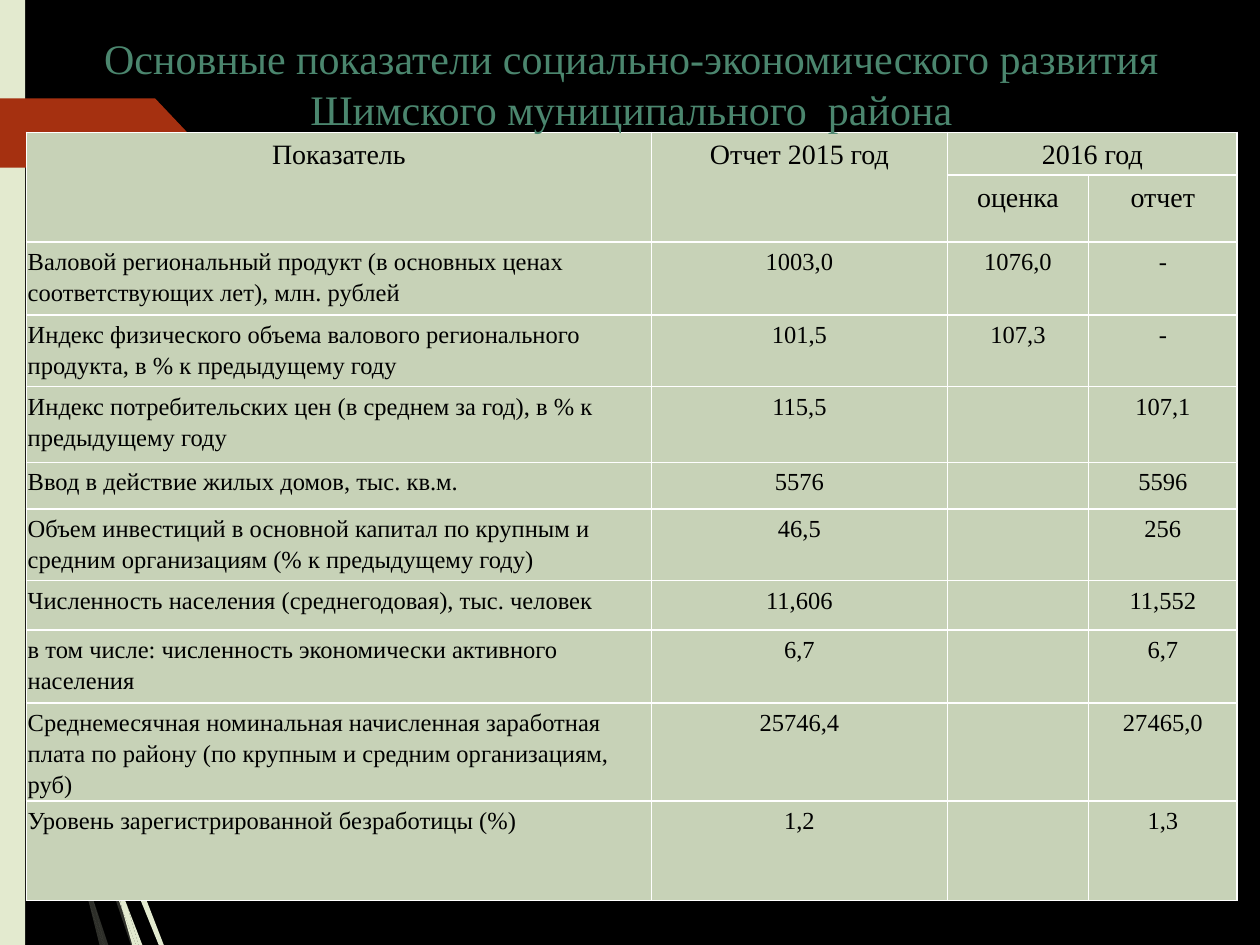
from dataclasses import dataclass

from lxml import etree
from pptx import Presentation
from pptx.dml.color import RGBColor
from pptx.enum.shapes import MSO_SHAPE
from pptx.enum.text import MSO_ANCHOR, PP_ALIGN
from pptx.oxml.ns import qn
from pptx.util import Inches, Pt

RECTANGLE = MSO_SHAPE.RECTANGLE
CENTER, LEFT = PP_ALIGN.CENTER, PP_ALIGN.LEFT
TOP = MSO_ANCHOR.TOP


@dataclass(frozen=True)
class Theme:
    background: str = "000000"
    cream: str = "E3EACF"
    arrow: str = "A53010"
    cell: str = "C7D2B7"
    border: str = "FFFFFF"
    body: str = "000000"
    title: str = "4B866E"
    font: str = "Times New Roman"
    title_size: int = 24
    header_size: int = 16
    body_size: int = 14


THEME = Theme()

TITLE_LINES = [
    "Основные показатели социально-экономического развития",
    "Шимского муниципального  района",
]
COLUMN_WIDTHS = [4.96, 2.35, 1.12, 1.18]
ROW_HEIGHTS = [0.34, 0.53, 0.58, 0.57, 0.6, 0.37, 0.57, 0.39, 0.58, 0.78, 0.79]
HEADER_ROWS = 2
TABLE_ROWS = [
    ("Показатель", "Отчет 2015 год", "2016 год", ""),
    ("", "", "оценка", "отчет"),
    ("Валовой региональный продукт (в основных ценах соответствующих лет), млн. рублей",
     "1003,0", "1076,0", "-"),
    ("Индекс физического объема валового регионального продукта, в % к предыдущему году",
     "101,5", "107,3", "-"),
    ("Индекс потребительских цен (в среднем за год), в % к предыдущему году",
     "115,5", "", "107,1"),
    ("Ввод в действие жилых домов, тыс. кв.м.", "5576", "", "5596"),
    ("Объем инвестиций в основной капитал по крупным и средним организациям "
     "(% к предыдущему году)", "46,5", "", "256"),
    ("Численность населения (среднегодовая), тыс. человек", "11,606", "", "11,552"),
    ("в том числе: численность экономически активного населения", "6,7", "", "6,7"),
    ("Среднемесячная номинальная начисленная заработная плата по району "
     "(по крупным и средним организациям, руб)", "25746,4", "", "27465,0"),
    ("Уровень зарегистрированной безработицы (%)", "1,2", "", "1,3"),
]
MERGES = [((0, 0), (1, 0)), ((0, 1), (1, 1)), ((0, 2), (0, 3))]

# Grass strands that reach below the table, as points in inches.
FAINT_STRANDS = [
    [(0.64, 6.07), (0.61, 5.96), (0.61, 6.1), (0.85, 6.94), (1.04, 7.5), (1.08, 7.5),
     (0.88, 6.92)],
    [(0.83, 7.5), (0.86, 7.5), (0.73, 7.11)],
    [(0.7, 7.14), (0.79, 7.5), (0.82, 7.5)],
    [(0.67, 6.92), (0.65, 6.83), (0.69, 7.07), (0.7, 7.14), (0.82, 7.5), (0.83, 7.5),
     (0.73, 7.11)],
]
BRIGHT_STRANDS = [
    [(0.94, 6.49), (0.91, 6.41), (0.91, 6.56), (1.09, 7.08), (1.26, 7.5), (1.3, 7.5),
     (1.13, 7.06)],
    [(0.91, 6.91), (0.81, 6.57), (0.6, 5.56), (0.53, 5.05), (0.47, 4.77), (0.56, 5.57),
     (0.77, 6.59), (0.92, 7.08), (0.97, 7.22), (0.96, 7.17)],
    [(1.1, 7.5), (1.13, 7.5), (1.01, 7.19)],
    [(0.97, 7.22), (1.05, 7.5), (1.08, 7.5)],
    [(0.96, 7.06), (0.91, 6.91), (0.96, 7.17), (0.97, 7.22), (1.08, 7.5), (1.1, 7.5),
     (1.01, 7.19)],
]


def paint(shape, color, opacity=100):
    shape.shadow.inherit = False
    shape.fill.solid()
    shape.fill.fore_color.rgb = RGBColor.from_string(color)
    shape.line.fill.background()
    if opacity < 100:
        fill_color = next(shape.fill._xPr.iter(qn("a:srgbClr")))
        etree.SubElement(fill_color, qn("a:alpha"), val=str(opacity * 1000))


def add_outline(page, points, color, opacity=100):
    corners = [(Inches(x), Inches(y)) for x, y in points]
    builder = page.shapes.build_freeform(*corners[0])
    builder.add_line_segments(corners[1:], close=True)
    paint(builder.convert_to_shape(), color, opacity)


def write_text(frame, lines, size, color, align=LEFT, spacing=None):
    """Write the lines as one paragraph with line breaks."""
    frame.word_wrap = True
    para = frame.paragraphs[0]
    para.alignment = align
    if spacing:
        para.line_spacing = spacing
    for index, line in enumerate(lines):
        if index:
            para.add_line_break()
        span = para.add_run()
        span.text = line
        span.font.name = THEME.font
        span.font.size = Pt(size)
        span.font.color.rgb = RGBColor.from_string(color)


def add_borders(cell, color, width):
    properties = cell._tc.get_or_add_tcPr()
    for index, side in enumerate(("lnL", "lnR", "lnT", "lnB")):
        line = etree.Element(qn(f"a:{side}"), w=str(Pt(width)))
        fill = etree.SubElement(line, qn("a:solidFill"))
        etree.SubElement(fill, qn("a:srgbClr"), val=color)
        properties.insert(index, line)


def add_decoration(page, left, top, width, height):
    for strand in FAINT_STRANDS:
        add_outline(page, strand, THEME.cream, opacity=20)
    for strand in BRIGHT_STRANDS:
        add_outline(page, strand, THEME.cream)
    strip = page.shapes.add_shape(
        RECTANGLE, Inches(left), Inches(top), Inches(width), Inches(height))
    paint(strip, THEME.cream)


def add_arrow(page, left, top, width, height):
    right, bottom, middle = left + width, top + height, top + height / 2
    shoulder = right - 0.26
    add_outline(page, [(left, top), (shoulder, top), (right, middle),
                       (shoulder, bottom), (left, bottom)], THEME.arrow)


def add_indicator_table(page, left, top):
    frame = page.shapes.add_table(
        len(ROW_HEIGHTS), len(COLUMN_WIDTHS), Inches(left), Inches(top),
        Inches(sum(COLUMN_WIDTHS)), Inches(sum(ROW_HEIGHTS)))
    table = frame.table
    for column, width in zip(table.columns, COLUMN_WIDTHS):
        column.width = Inches(width)
    for row, height in zip(table.rows, ROW_HEIGHTS):
        row.height = Inches(height)
    for row_index, values in enumerate(TABLE_ROWS):
        is_header = row_index < HEADER_ROWS
        for column_index, value in enumerate(values):
            cell = table.cell(row_index, column_index)
            cell.margin_left = cell.margin_right = Inches(0.01)
            cell.margin_top = cell.margin_bottom = Inches(0.02)
            cell.vertical_anchor = TOP
            cell.fill.solid()
            cell.fill.fore_color.rgb = RGBColor.from_string(THEME.cell)
            add_borders(cell, THEME.border, 1)
            if value:
                write_text(cell.text_frame, [value], color=THEME.body, spacing=1.15,
                           size=THEME.header_size if is_header else THEME.body_size,
                           align=CENTER if is_header or column_index else LEFT)
    for first, last in MERGES:
        table.cell(*first).merge(table.cell(*last))


def add_title(page, left, top, width, height):
    box = page.shapes.add_textbox(
        Inches(left), Inches(top), Inches(width), Inches(height))
    box.text_frame.vertical_anchor = TOP
    write_text(box.text_frame, TITLE_LINES, THEME.title_size, THEME.title, align=CENTER)


def main():
    deck = Presentation()
    deck.slide_width, deck.slide_height = Inches(10), Inches(7.5)
    page = deck.slides.add_slide(deck.slide_layouts[6])
    page.background.fill.solid()
    page.background.fill.fore_color.rgb = RGBColor.from_string(THEME.background)
    add_decoration(page, 0, 0, 0.2, 7.5)
    add_arrow(page, 0, 0.78, 1.49, 0.55)
    add_indicator_table(page, 0.21, 1.05)
    add_title(page, 0.02, 0.21, 9.98, 1.21)
    deck.save("out.pptx")


if __name__ == "__main__":
    main()
